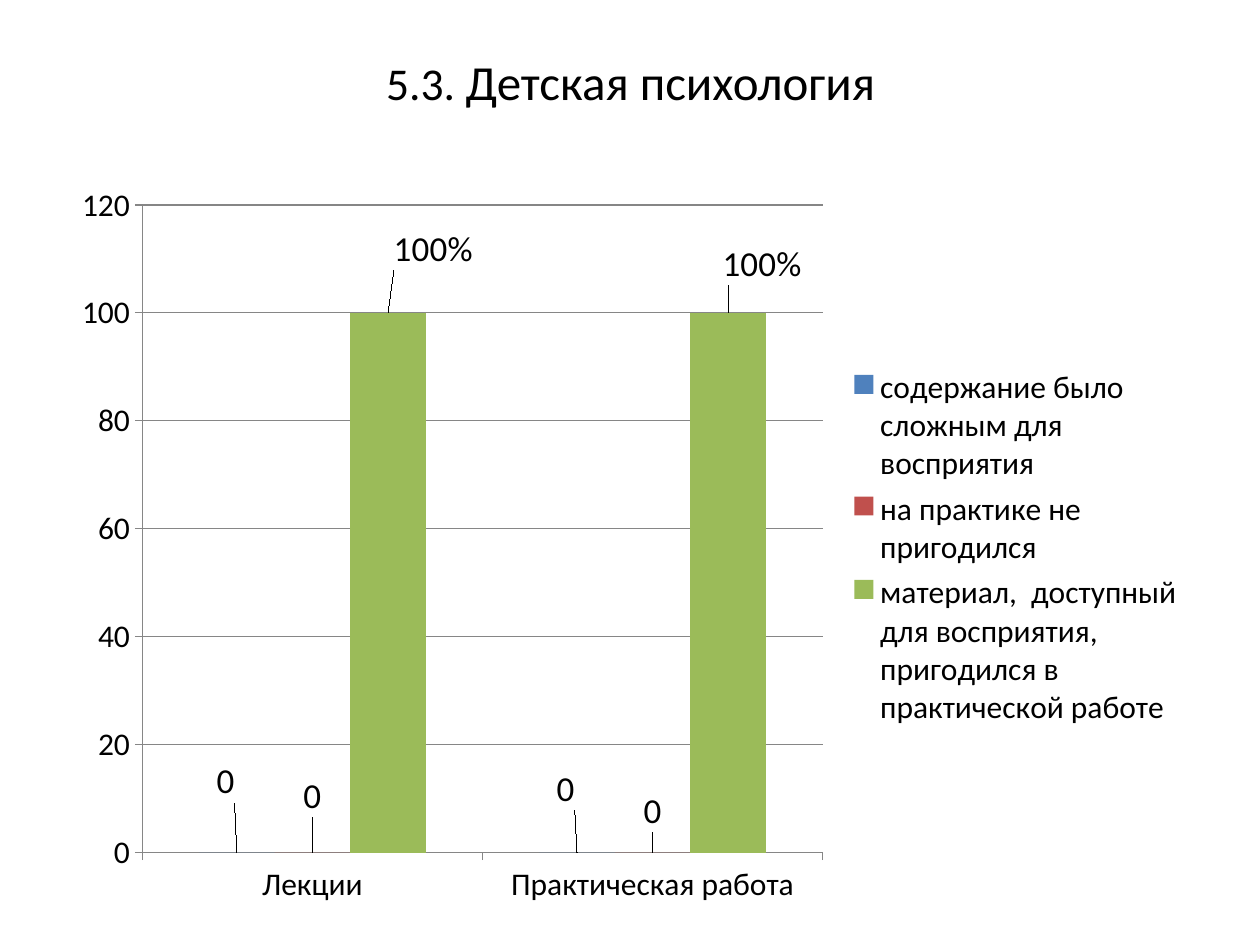
from lxml.etree import SubElement
from pptx import Presentation
from pptx.chart.data import CategoryChartData
from pptx.dml.color import RGBColor
from pptx.enum.chart import XL_CHART_TYPE as ChartType
from pptx.enum.chart import XL_LABEL_POSITION as LabelPosition
from pptx.enum.chart import XL_LEGEND_POSITION as LegendPosition
from pptx.enum.chart import XL_TICK_MARK as TickMark
from pptx.enum.text import MSO_ANCHOR as Anchor
from pptx.enum.text import PP_ALIGN as Align
from pptx.oxml import parse_xml
from pptx.oxml.ns import nsdecls, qn
from pptx.util import Inches, Pt

FONT = "Calibri"
BLACK = "000000"
GRAY = "868686"
CATEGORIES = ["Лекции", "Практическая работа"]
ANSWERS = [
    ("содержание было сложным для восприятия", (0, 0), "4F81BD",
     None, [(-0.01, -0.06), (-0.01, -0.05)]),
    ("на практике не пригодился", (0, 0), "C0504D",
     None, [(0, -0.04), (0, -0.02)]),
    ("материал,  доступный для восприятия, пригодился в практической работе",
     (100, 100), "9BBB59", "100%", [(0.04, -0.05), (0.03, -0.03)]),
]


def rgb(value):
    return RGBColor.from_string(value)


def apply_format(target, values):
    for name, value in values.items():
        setattr(target, name, value)


def format_font(font, size):
    apply_format(font, {"name": FONT, "size": Pt(size), "bold": False})
    font.color.rgb = rgb(BLACK)


def place(target, values):
    names = ("left", "top", "width", "height")
    apply_format(target, dict(zip(names, map(Inches, values))))


def make_layout(values):
    layout = parse_xml(f"<c:layout {nsdecls('c')}/>")
    manual = SubElement(layout, qn("c:manualLayout"))
    for name, value in values.items():
        SubElement(manual, qn(f"c:{name}")).set("val", str(value))
    return layout


def set_layout(element, values, after=None):
    for old in element.findall(qn("c:layout")):
        element.remove(old)
    position = 0 if after is None else element.index(element.find(qn(after))) + 1
    element.insert(position, make_layout(values))


def add_title(slide, runs):
    title = slide.shapes.title
    place(title, (0.2, 0.3, 9.61, 0.69))
    frame = title.text_frame
    apply_format(frame, {"vertical_anchor": Anchor.MIDDLE, "word_wrap": True})
    paragraph = frame.paragraphs[0]
    paragraph.alignment = Align.CENTER
    for text, size in runs:
        run = paragraph.add_run()
        run.text = text
        format_font(run.font, size)


def format_axis(axis):
    apply_format(axis, {"major_tick_mark": TickMark.OUTSIDE,
                        "minor_tick_mark": TickMark.NONE})
    format_line(axis.format.line)
    format_font(axis.tick_labels.font, 18)


def format_line(line):
    line.color.rgb = rgb(GRAY)
    line.width = Pt(0.75)


def label_answer(series, caption, offsets):
    labels = series.data_labels
    apply_format(labels, {"show_value": True, "position": LabelPosition.OUTSIDE_END})
    format_font(labels.font, 20)
    for index, (x, y) in enumerate(offsets):
        label = series.points[index].data_label
        label.position = LabelPosition.OUTSIDE_END
        if caption:
            run = label.text_frame.paragraphs[0].add_run()
            run.text = caption
            format_font(run.font, 20)
        else:
            format_font(label.font, 20)
        point_label = labels._element.findall(qn("c:dLbl"))[index]
        set_layout(point_label, {"x": x, "y": y}, after="c:idx")


def add_answer_chart(slide):
    data = CategoryChartData()
    data.categories = CATEGORIES
    for name, values, *_ in ANSWERS:
        data.add_series(name, values)
    area = map(Inches, (0.5, 1.39, 9, 5.91))
    chart = slide.shapes.add_chart(ChartType.COLUMN_CLUSTERED, *area, data).chart
    apply_format(chart, {"has_title": False, "has_legend": True})
    format_font(chart.font, 18)

    plot = chart.plots[0]
    apply_format(plot, {"gap_width": 150, "overlap": 0, "vary_by_categories": False})
    for series, (_, _, color, caption, offsets) in zip(plot.series, ANSWERS):
        series.format.fill.solid()
        series.format.fill.fore_color.rgb = rgb(color)
        label_answer(series, caption, offsets)

    format_axis(chart.category_axis)
    scale = chart.value_axis
    format_axis(scale)
    apply_format(scale, {"minimum_scale": 0, "maximum_scale": 120,
                         "major_unit": 20, "has_major_gridlines": True})
    format_line(scale.major_gridlines.format.line)

    legend = chart.legend
    apply_format(legend, {"position": LegendPosition.RIGHT, "include_in_layout": False})
    format_font(legend.font, 18)
    edges = {"xMode": "edge", "yMode": "edge"}
    set_layout(legend._element, {**edges, "x": 0.69, "y": 0.25, "w": 0.3, "h": 0.5},
               after="c:legendPos")
    plot_area = chart._chartSpace.chart.plotArea
    set_layout(plot_area, {"layoutTarget": "inner", **edges,
                           "x": 0.07, "y": 0.04, "w": 0.6, "h": 0.87})


def main():
    deck = Presentation()
    apply_format(deck, {"slide_width": Inches(10), "slide_height": Inches(7.5)})
    slide = deck.slides.add_slide(deck.slide_layouts[5])
    add_title(slide, [("5.3. ", 26), ("Детская психология", 28)])
    add_answer_chart(slide)
    deck.save("out.pptx")


if __name__ == "__main__":
    main()
